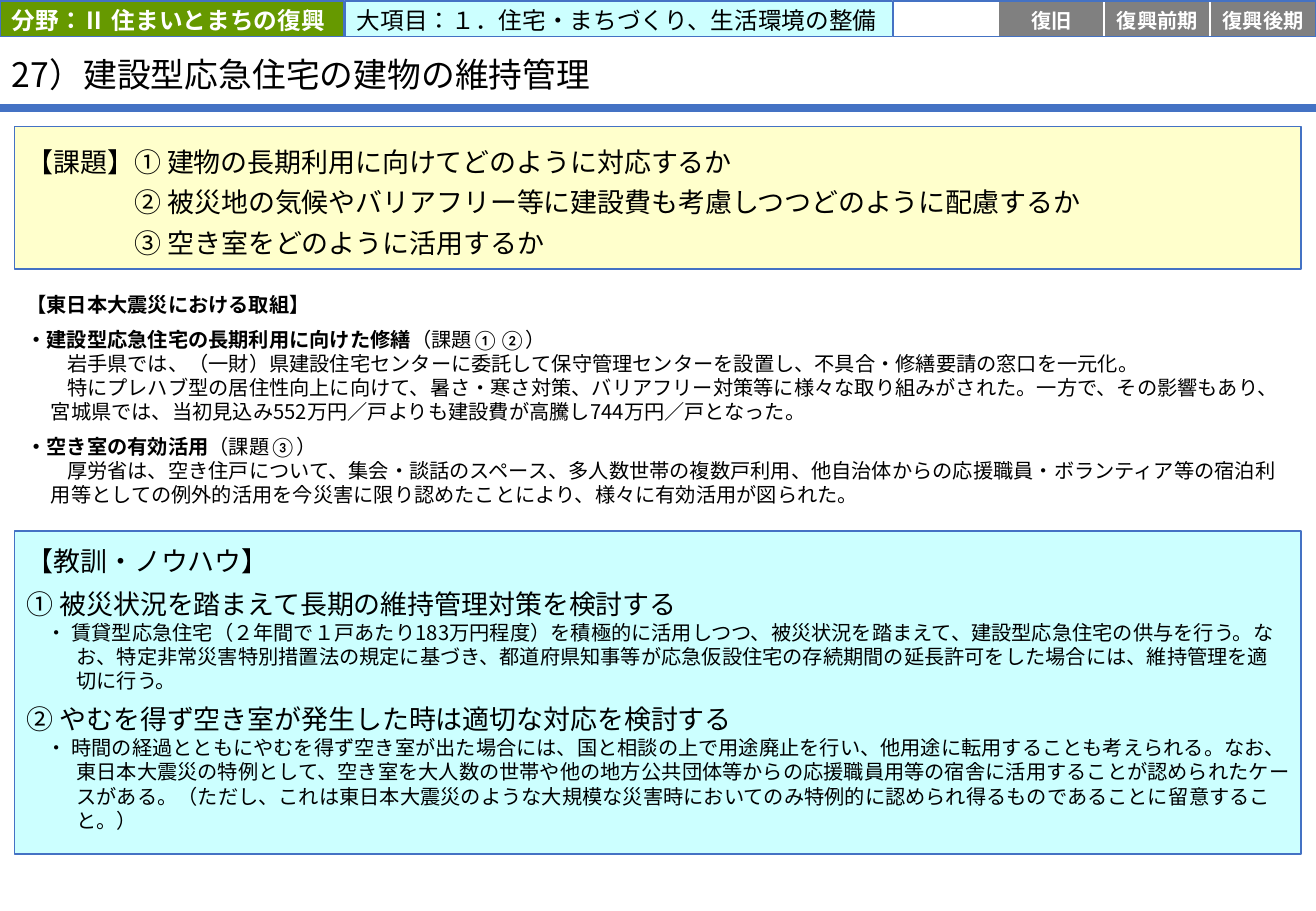
from dataclasses import dataclass

from lxml import etree
from pptx import Presentation
from pptx.dml.color import RGBColor
from pptx.enum.lang import MSO_LANGUAGE_ID
from pptx.enum.shapes import MSO_CONNECTOR, MSO_SHAPE
from pptx.enum.text import MSO_ANCHOR, PP_ALIGN
from pptx.oxml.ns import qn
from pptx.util import Pt

RECTANGLE = MSO_SHAPE.RECTANGLE
STRAIGHT = MSO_CONNECTOR.STRAIGHT
TOP, MIDDLE = MSO_ANCHOR.TOP, MSO_ANCHOR.MIDDLE
LEFT, CENTER = PP_ALIGN.LEFT, PP_ALIGN.CENTER
JAPANESE = MSO_LANGUAGE_ID.JAPANESE


@dataclass(frozen=True)
class Theme:
    """Colours, fonts and type sizes of the slide."""
    black: str = "000000"
    white: str = "FFFFFF"
    blue: str = "4472C4"
    green: str = "669900"
    cyan: str = "CCFFFF"
    yellow: str = "FFFFCC"
    gray: str = "808080"
    heading_font: str = "Calibri"
    body_font: str = "Noto Sans CJK JP"
    title: int = 20
    lead: int = 16
    header: int = 14
    body: int = 12


THEME = Theme()
PAGE_WIDTH, PAGE_HEIGHT = 780, 540
PANEL_LEFT, PANEL_WIDTH = 8.64, 762.5
HEADER_TOP, HEADER_HEIGHT = 0.72, 20.9
PHASES_LEFT = 529.2
PHASES = ("", "復旧", "復興前期", "復興後期")
ISSUES = (
    "【課題】① 建物の長期利用に向けてどのように対応するか",
    "② 被災地の気候やバリアフリー等に建設費も考慮しつつどのように配慮するか",
    "③ 空き室をどのように活用するか",
)
EFFORTS = (
    ("・建設型応急住宅の長期利用に向けた修繕", "（課題①②）", (
        "岩手県では、（一財）県建設住宅センターに委託して保守管理センターを設置し、不具合・修繕要請の窓口を一元化。",
        "特にプレハブ型の居住性向上に向けて、暑さ・寒さ対策、バリアフリー対策等に様々な取り組みがされた。一方で、その影響もあり、"
        "宮城県では、当初見込み552万円／戸よりも建設費が高騰し744万円／戸となった。",
    )),
    ("・空き室の有効活用", "（課題③）", (
        "厚労省は、空き住戸について、集会・談話のスペース、多人数世帯の複数戸利用、他自治体からの応援職員・ボランティア等の宿泊利"
        "用等としての例外的活用を今災害に限り認めたことにより、様々に有効活用が図られた。",
    )),
)
LESSONS = (
    ("① 被災状況を踏まえて長期の維持管理対策を検討する",
     "・ 賃貸型応急住宅（２年間で１戸あたり183万円程度）を積極的に活用しつつ、被災状況を踏まえて、建設型応急住宅の供与を行う。"
     "なお、特定非常災害特別措置法の規定に基づき、都道府県知事等が応急仮設住宅の存続期間の延長許可をした場合には、"
     "維持管理を適切に行う。"),
    ("② やむを得ず空き室が発生した時は適切な対応を検討する",
     "・ 時間の経過とともにやむを得ず空き室が出た場合には、国と相談の上で用途廃止を行い、他用途に転用することも考えられる。"
     "なお、東日本大震災の特例として、空き室を大人数の世帯や他の地方公共団体等からの応援職員用等の宿舎に活用することが"
     "認められたケースがある。（ただし、これは東日本大震災のような大規模な災害時においてのみ特例的に認められ得るもので"
     "あることに留意すること。）"),
)


def set_frame(box, insets, anchor):
    """Set the wrapping, insets and anchor of a box."""
    frame = box.text_frame
    frame.word_wrap = True
    frame.vertical_anchor = anchor
    (frame.margin_left, frame.margin_top,
     frame.margin_right, frame.margin_bottom) = map(Pt, insets)


def add_box(page, left, top, width, height, fill=None, line=None,
            insets=(7.2, 3.6, 7.2, 3.6), anchor=MIDDLE):
    """Add a flat rectangle."""
    box = page.shapes.add_shape(RECTANGLE, Pt(left), Pt(top), Pt(width), Pt(height))
    box.shadow.inherit = False
    if fill:
        box.fill.solid()
        box.fill.fore_color.rgb = RGBColor.from_string(fill)
    else:
        box.fill.background()
    if line:
        box.line.color.rgb = RGBColor.from_string(line)
        box.line.width = Pt(1)
    else:
        box.line.fill.background()
    set_frame(box, insets, anchor)
    return box


def add_para(box, margin=0, indent=0, before=0, spacing=None, align=LEFT):
    """Add a paragraph, using the empty first one when it is free."""
    frame = box.text_frame
    para = frame.paragraphs[0]
    if para.runs:
        para = frame.add_paragraph()
    para.alignment = align
    para.space_before = Pt(before)
    para.line_spacing = spacing
    properties = para._p.get_or_add_pPr()
    properties.set("marL", str(Pt(margin)))
    properties.set("indent", str(Pt(indent)))
    return para


def add_span(para, text, size, font=THEME.body_font, color=THEME.black, bold=False):
    """Add a run with the same font for Latin and Japanese text."""
    span = para.add_run()
    span.text = text
    span.font.name = font
    span.font.size = Pt(size)
    span.font.bold = bold
    span.font.color.rgb = RGBColor.from_string(color)
    span.font.language_id = JAPANESE
    latin = span._r.rPr.find(qn("a:latin"))
    east_asian = etree.Element(qn("a:ea"), typeface=font)
    latin.addnext(east_asian)


def add_title(page):
    """Add the title and the rule below it."""
    rule = page.shapes.add_connector(STRAIGHT, 0, Pt(64), Pt(PAGE_WIDTH), Pt(64))
    rule.line.color.rgb = RGBColor.from_string(THEME.blue)
    rule.line.width = Pt(4.5)
    etree.SubElement(rule._element.spPr, qn("a:effectLst"))
    title = page.shapes.add_textbox(0, Pt(23), Pt(682.5), Pt(41.8))
    set_frame(title, (7.2, 2.9, 7.2, 0), MIDDLE)
    add_span(add_para(title, spacing=0.9), "27）建設型応急住宅の建物の維持管理", THEME.title)


def add_header(page):
    """Add the field, the category and the phase cells."""
    def cell(left, width, text, fill, line, size, color, bold, side, align):
        box = add_box(page, left, HEADER_TOP, width, HEADER_HEIGHT, fill, line,
                      (side, 1.44, side, 0))
        if text:
            add_span(add_para(box, align=align), text, size,
                     THEME.heading_font, color, bold)

    cell(0, 203.8, "分野：Ⅱ 住まいとまちの復興", THEME.green, THEME.blue,
         THEME.header, THEME.white, True, 7.2, LEFT)
    cell(204.5, 326, "大項目：１．住宅・まちづくり、生活環境の整備", THEME.cyan, THEME.blue,
         THEME.header, THEME.black, False, 7.2, LEFT)
    width = (PAGE_WIDTH - PHASES_LEFT) / len(PHASES)
    for index, phase in enumerate(PHASES):
        cell(PHASES_LEFT + index * width, width, phase,
             THEME.gray if phase else THEME.white, THEME.white,
             THEME.body, THEME.white, True, 0, CENTER)
    add_box(page, PHASES_LEFT, HEADER_TOP, width * len(PHASES), HEADER_HEIGHT, line=THEME.blue)


def add_issues(page):
    """Add the panel of issues."""
    box = add_box(page, PANEL_LEFT, 75, PANEL_WIDTH, 84.5, THEME.yellow, THEME.blue,
                  (7.2, 8.5, 7.2, 8.5))
    for index, issue in enumerate(ISSUES):
        margin = 4 * THEME.lead if index else 0
        add_span(add_para(box, margin, spacing=Pt(24)), issue, THEME.lead)


def add_efforts(page):
    """Add the panel of efforts made after the earthquake."""
    box = add_box(page, PANEL_LEFT, 165.6, PANEL_WIDTH, 142.6, THEME.white)
    add_span(add_para(box), "【東日本大震災における取組】", THEME.body,
             THEME.heading_font, bold=True)
    for heading, issue, details in EFFORTS:
        para = add_para(box, before=6)
        add_span(para, heading, THEME.body, THEME.heading_font, bold=True)
        add_span(para, issue, THEME.body, THEME.heading_font)
        for detail in details:
            add_span(add_para(box, 14.4, 9.6), detail, THEME.body)


def add_lessons(page):
    """Add the panel of lessons and know-how."""
    box = add_box(page, PANEL_LEFT, 314.6, PANEL_WIDTH, 191.5, THEME.cyan, THEME.blue,
                  (7.2, 8.5, 7.2, 0), TOP)
    add_span(add_para(box), "【教訓・ノウハウ】", THEME.lead)
    for heading, detail in LESSONS:
        add_span(add_para(box, before=6), heading, THEME.lead)
        add_span(add_para(box, 29.5, -17.5), detail, THEME.body)


def main():
    """Build the slide and save it."""
    deck = Presentation()
    deck.slide_width, deck.slide_height = Pt(PAGE_WIDTH), Pt(PAGE_HEIGHT)
    page = deck.slides.add_slide(deck.slide_layouts[6])
    add_efforts(page)
    add_title(page)
    add_header(page)
    add_issues(page)
    add_lessons(page)
    deck.save("out.pptx")


if __name__ == "__main__":
    main()
